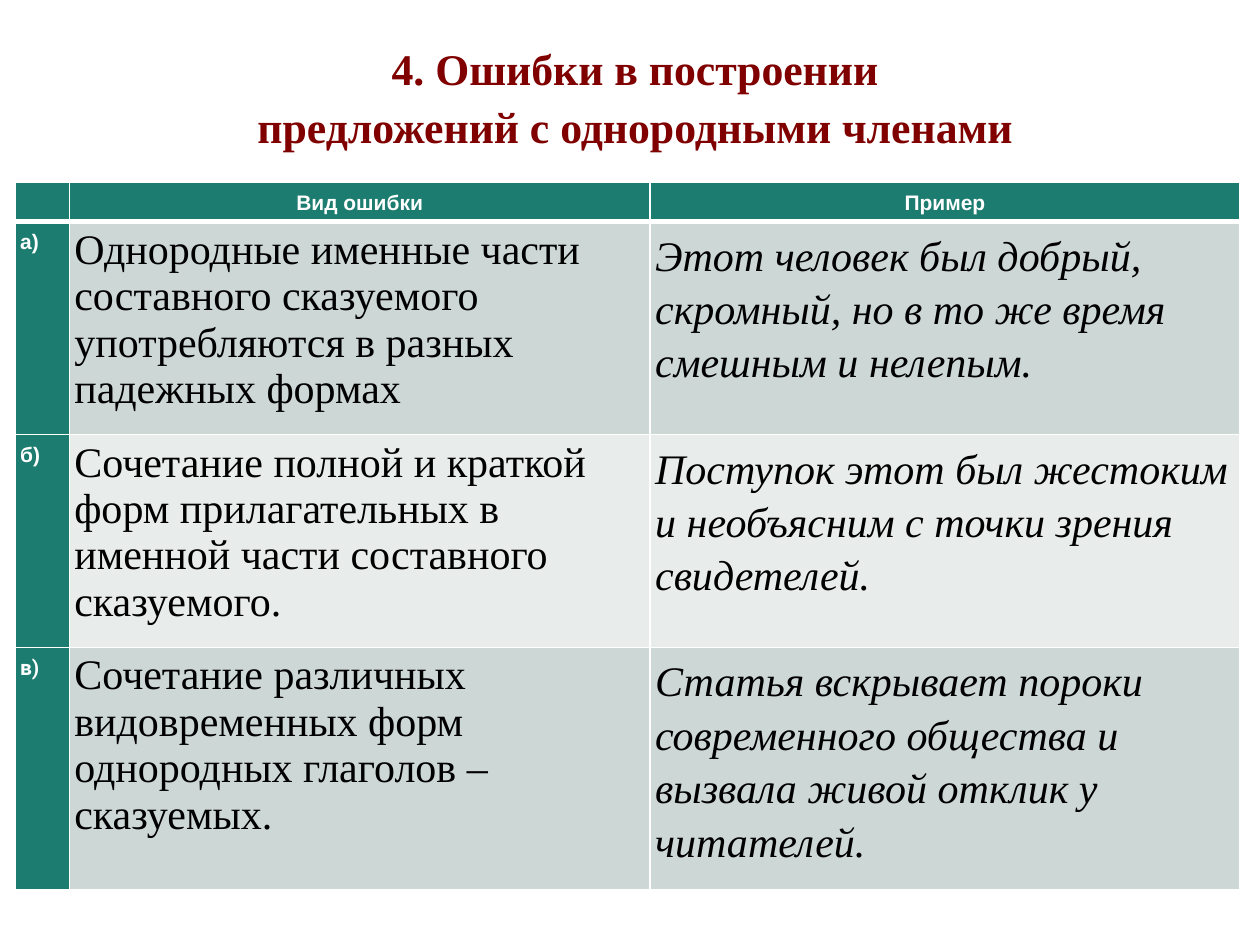
from lxml.etree import SubElement
from pptx import Presentation
from pptx.dml.color import RGBColor
from pptx.enum.text import MSO_ANCHOR, PP_ALIGN as Align
from pptx.oxml.ns import qn
from pptx.util import Inches, Pt

MAROON = RGBColor(0x80, 0x00, 0x00)
TEAL = RGBColor(0x1C, 0x7C, 0x70)
BAND_DARK = RGBColor(0xCD, 0xD7, 0xD5)
BAND_LIGHT = RGBColor(0xE8, 0xEC, 0xEB)
WHITE = RGBColor(0xFF, 0xFF, 0xFF)
BLACK = RGBColor(0x00, 0x00, 0x00)

SERIF, SANS = "Times New Roman", "Arial"
COLUMNS = (0.43, 4.61, 4.68)
ROWS = (0.31, 1.69, 1.69, 1.91)
INSET = Inches(0.04)

TITLE = ("4. Ошибки в построении", "предложений с однородными членами")
HEADINGS = ("", "Вид ошибки", "Пример")
ERRORS = (
    ("а)", "Однородные именные части составного сказуемого употребляются "
           "в разных падежных формах",
     "Этот человек был добрый, скромный, но в то же время смешным и нелепым."),
    ("б)", "Сочетание полной и краткой форм прилагательных в именной части "
           "составного сказуемого.",
     "Поступок этот был жестоким и необъясним с точки зрения свидетелей."),
    ("в)", "Сочетание различных видовременных форм однородных глаголов – "
           "сказуемых.",
     "Статья вскрывает пороки современного общества и вызвала живой отклик "
     "у читателей."),
)


def write(para, text, *, font=SERIF, size=24, color=BLACK, bold=False,
          italic=False, align=Align.LEFT, spacing=1.0):
    para.alignment = align
    para.line_spacing = spacing
    para.font.size = Pt(size)
    if not text:
        return
    span = para.add_run()
    span.text = text
    span.font.name = font
    span.font.size = Pt(size)
    span.font.bold = bold
    span.font.italic = italic
    span.font.color.rgb = color


def add_title(page):
    box = page.shapes.add_textbox(Inches(0.51), Inches(0.24),
                                  Inches(9.06), Inches(0.94))
    frame = box.text_frame
    frame.word_wrap = True
    for index, line in enumerate(TITLE):
        para = frame.add_paragraph() if index else frame.paragraphs[0]
        write(para, line, size=25, color=MAROON, bold=True,
              align=Align.CENTER, spacing=1.1)


def set_borders(cell, bottom):
    """Draw white lines round a cell; they must precede its fill."""
    props = cell._tc.get_or_add_tcPr()
    for tag, width in (("lnL", 1), ("lnR", 1), ("lnT", 1), ("lnB", bottom)):
        line = SubElement(props, qn(f"a:{tag}"), w=str(Pt(width)))
        fill = SubElement(line, qn("a:solidFill"))
        SubElement(fill, qn("a:srgbClr"), val=str(WHITE))


def fill_cell(cell, text, fill, bottom=1, **style):
    set_borders(cell, bottom)
    cell.fill.solid()
    cell.fill.fore_color.rgb = fill
    cell.margin_left = cell.margin_right = INSET
    cell.margin_top = cell.margin_bottom = INSET
    cell.vertical_anchor = MSO_ANCHOR.TOP
    write(cell.text_frame.paragraphs[0], text, **style)


def add_error_table(page):
    table = page.shapes.add_table(
        len(ROWS), len(COLUMNS), Inches(0.12), Inches(1.45),
        Inches(sum(COLUMNS)), Inches(sum(ROWS))).table
    for column, width in zip(table.columns, COLUMNS):
        column.width = Inches(width)
    for row, height in zip(table.rows, ROWS):
        row.height = Inches(height)

    label = dict(font=SANS, size=12, color=WHITE, bold=True, spacing=1.15)

    # Heading row
    for index, heading in enumerate(HEADINGS):
        fill_cell(table.cell(0, index), heading, TEAL, bottom=3,
                  align=Align.CENTER, **label)

    # Letter, kind of error and example
    for number, (letter, kind, example) in enumerate(ERRORS, start=1):
        band = BAND_DARK if number % 2 else BAND_LIGHT
        letter_font = "Roboto" if letter == "в)" else SANS
        fill_cell(table.cell(number, 0), letter, TEAL,
                  **{**label, "font": letter_font})
        fill_cell(table.cell(number, 1), kind, band)
        fill_cell(table.cell(number, 2), example, band,
                  italic=True, spacing=1.15)


def main():
    deck = Presentation()
    deck.slide_width, deck.slide_height = Inches(10), Inches(7.5)
    page = deck.slides.add_slide(deck.slide_layouts[6])
    add_title(page)
    add_error_table(page)
    deck.save("out.pptx")


if __name__ == "__main__":
    main()
